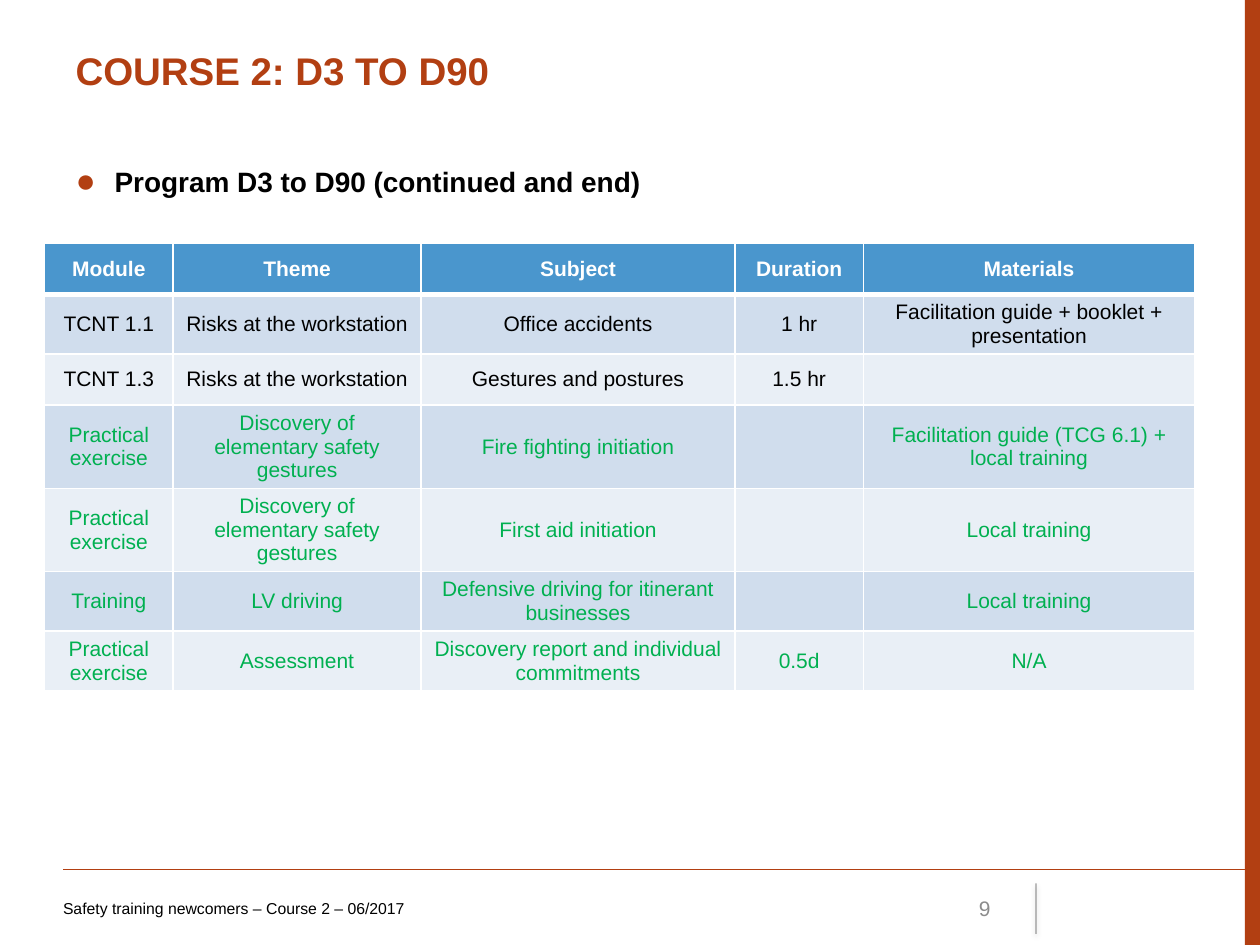
"""Build the course programme slide with its module table."""
import dataclasses
import typing

import lxml.etree
import pptx
import pptx.dml.color
import pptx.enum.shapes
import pptx.enum.text
import pptx.oxml.ns
import pptx.util

Pt = pptx.util.Pt
ALIGN = pptx.enum.text.PP_ALIGN
ANCHOR = pptx.enum.text.MSO_ANCHOR
RUST, BLACK, WHITE, GREEN, GREY = "B23F12", "000000", "FFFFFF", "00B050", "8C8C8C"
HEADER_FILL, BANDS = "4A96CD", ("E9EFF6", "D0DDED")
COLUMN_WIDTHS = (73.4, 141.8, 179.3, 73.4, 189.4)
ROW_HEIGHT = 29.2


@dataclasses.dataclass
class Rule:
    start: tuple[float, float]
    end: tuple[float, float]
    color: str
    width: float
    alpha: int = 100
    shadow: bool = False


@dataclasses.dataclass
class Label:
    text: str
    box: tuple[float, float, float, float]
    size: float
    color: str
    align: ALIGN = ALIGN.LEFT
    left_inset: float = 7.2


@dataclasses.dataclass
class Row:
    cells: tuple[str, ...]
    color: str = GREEN
    bold: bool = False


RULES = (
    Rule((36, 496.8), (720, 496.8), RUST, 0.75),
    Rule((592, 504.8), (592, 533.6), BLACK, 0.5, 70, True),
)
LABELS = (
    Label("9", (516.2, 504.8, 56.9, 28.8), 12, GREY, ALIGN.RIGHT),
    Label("Safety training newcomers – Course 2 – 06/2017",
          (36, 504.8, 437.8, 28.8), 9, BLACK, left_inset=0),
)
GESTURES = "Discovery of elementary safety gestures"
ROWS = (
    Row(("Module", "Theme", "Subject", "Duration", "Materials"), WHITE, True),
    Row(("TCNT 1.1", "Risks at the workstation", "Office accidents", "1 hr",
         "Facilitation guide + booklet + presentation"), BLACK),
    Row(("TCNT 1.3", "Risks at the workstation", "Gestures and postures", "1.5 hr", ""), BLACK),
    Row(("Practical exercise", GESTURES, "Fire fighting initiation", "",
         "Facilitation guide (TCG 6.1) + local training")),
    Row(("Practical exercise", GESTURES, "First aid initiation", "", "Local training")),
    Row(("Training", "LV driving", "Defensive driving for itinerant businesses", "",
         "Local training")),
    Row(("Practical exercise", "Assessment", "Discovery report and individual commitments",
         "0.5d", "N/A")),
)


def rgb(value: str) -> pptx.dml.color.RGBColor:
    """Turn a hex string into a colour."""
    return pptx.dml.color.RGBColor.from_string(value)


def apply(obj: typing.Any, values: dict[str, typing.Any]) -> None:
    """Set each named attribute on an object."""
    for name, value in values.items():
        setattr(obj, name, value)


def add(parent: typing.Any, tag: str, **attrs: typing.Any) -> typing.Any:
    """Append a DrawingML element to a parent."""
    return lxml.etree.SubElement(parent, pptx.oxml.ns.qn(f"a:{tag}"),
                                 {k: str(v) for k, v in attrs.items()})


def write(tf: typing.Any, text: str, size: float, color: str, bold: bool = False,
          align: ALIGN = ALIGN.LEFT) -> typing.Any:
    """Write one formatted paragraph into a text frame."""
    p = tf.paragraphs[0]
    apply(p, {"alignment": align, "space_before": Pt(0)})
    if text:
        r = p.add_run()
        r.text = text
        apply(r.font, {"name": "Arial", "size": Pt(size), "bold": bold})
        r.font.color.rgb = rgb(color)
    return p


def fill_placeholder(sp: typing.Any, text: str, box: tuple[float, ...], size: float,
                     color: str) -> typing.Any:
    """Move a placeholder and write its bold text."""
    apply(sp, dict(zip(("left", "top", "width", "height"), map(Pt, box))))
    apply(sp.text_frame, {"auto_size": pptx.enum.text.MSO_AUTO_SIZE.NONE, "word_wrap": True,
                          "vertical_anchor": ANCHOR.TOP, "margin_top": Pt(5.4)})
    return write(sp.text_frame, text, size, color, True)


def add_bullet(p: typing.Any) -> None:
    """Give a paragraph a hanging round bullet."""
    pPr = p._p.get_or_add_pPr()
    pPr.set("marL", str(Pt(22.3)))
    pPr.set("indent", str(-Pt(22.3)))
    add(add(pPr, "buClr"), "srgbClr", val=RUST)
    add(pPr, "buSzPct", val=120000)
    add(pPr, "buFont", typeface="Arial")
    add(pPr, "buChar", char="●")
    p.space_after = Pt(3)


def draw_rule(s: typing.Any, rule: Rule) -> None:
    """Draw a straight line with its opacity and shadow."""
    sp = s.shapes.add_connector(pptx.enum.shapes.MSO_CONNECTOR.STRAIGHT,
                                *map(Pt, rule.start + rule.end))
    sp.line.width = Pt(rule.width)
    sp.line.color.rgb = rgb(rule.color)
    color = sp.line._ln.find(".//" + pptx.oxml.ns.qn("a:srgbClr"))
    add(color, "alpha", val=rule.alpha * 1000)
    effects = add(sp._element.spPr, "effectLst")
    if rule.shadow:
        shadow = add(effects, "outerShdw", blurRad=Pt(3.1), dist=Pt(1.6), dir=5400000,
                     rotWithShape=0)
        add(add(shadow, "srgbClr", val=BLACK), "alpha", val=38000)


def draw_label(s: typing.Any, label: Label) -> None:
    """Draw a footer text box."""
    tf = s.shapes.add_textbox(*map(Pt, label.box)).text_frame
    apply(tf, {"word_wrap": True, "vertical_anchor": ANCHOR.MIDDLE,
               "margin_left": Pt(label.left_inset)})
    write(tf, label.text, label.size, label.color, align=label.align)


def draw_table(s: typing.Any, rows: tuple[Row, ...]) -> None:
    """Draw the module table with banded rows and white borders."""
    table = s.shapes.add_table(len(rows), len(COLUMN_WIDTHS), Pt(25.5), Pt(139), 
                               Pt(sum(COLUMN_WIDTHS)), Pt(ROW_HEIGHT * len(rows))).table
    for column, width in zip(table.columns, COLUMN_WIDTHS):
        column.width = Pt(width)
    for i, row in enumerate(rows):
        table.rows[i].height = Pt(ROW_HEIGHT)
        widths = {"lnL": 1, "lnR": 1, "lnT": 3 if i == 1 else 1, "lnB": 3 if i == 0 else 1}
        for j, text in enumerate(row.cells):
            cell = table.cell(i, j)
            cell.vertical_anchor = ANCHOR.MIDDLE
            write(cell.text_frame, text, 12, row.color, row.bold, ALIGN.CENTER)
            for side, width in widths.items():
                ln = add(cell._tc.get_or_add_tcPr(), side, w=Pt(width))
                add(add(ln, "solidFill"), "srgbClr", val=WHITE)
            cell.fill.solid()
            cell.fill.fore_color.rgb = rgb(BANDS[i % 2] if i else HEADER_FILL)


def main() -> None:
    """Assemble and save the slide."""
    prs = pptx.Presentation()
    apply(prs, {"slide_width": Pt(720), "slide_height": Pt(540)})
    s = prs.slides.add_slide(prs.slide_layouts[1])
    bar = s.shapes.add_shape(pptx.enum.shapes.MSO_SHAPE.RECTANGLE,
                             Pt(711.4), Pt(0), Pt(8.6), Pt(540))
    bar.shadow.inherit = False
    bar.fill.solid()
    bar.fill.fore_color.rgb = rgb(RUST)
    bar.line.fill.background()
    for rule in RULES:
        draw_rule(s, rule)
    fill_placeholder(s.shapes.title, "COURSE 2: D3 TO D90", (36, 21.6, 647.3, 49.7), 22, RUST)
    add_bullet(fill_placeholder(s.placeholders[1], "Program D3 to D90 (continued and end)",
                                (36, 88.6, 647.3, 33.8), 16, BLACK))
    draw_table(s, ROWS)
    for label in LABELS:
        draw_label(s, label)
    prs.save("out.pptx")


if __name__ == "__main__":
    main()
